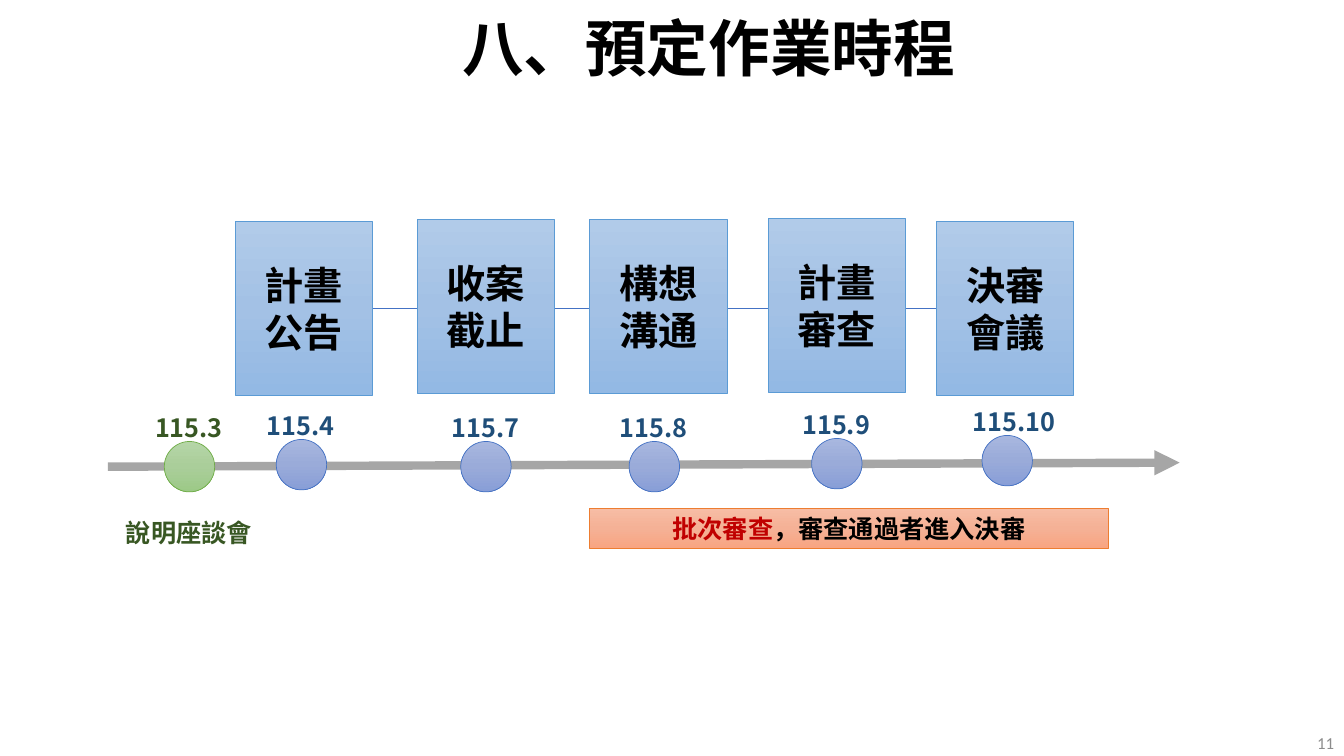
import copy
from dataclasses import dataclass

import pptx
import pptx.dml.color
import pptx.enum.dml
import pptx.enum.shapes
import pptx.enum.text
import pptx.oxml.ns
import pptx.util
from lxml import etree

Inches = pptx.util.Inches
qn = pptx.oxml.ns.qn
Align = pptx.enum.text.PP_ALIGN
Anchor = pptx.enum.text.MSO_ANCHOR
Preset = pptx.enum.shapes.MSO_SHAPE
Straight = pptx.enum.shapes.MSO_CONNECTOR.STRAIGHT


@dataclass(frozen=True)
class Theme:
    font: str = "Noto Sans CJK SC"
    number_font: str = "Calibri"
    title_size: int = 44
    step_size: int = 28
    label_size: int = 18
    number_size: int = 12
    black: str = "000000"
    gray: str = "8C8C8C"
    red: str = "C00000"
    green_text: str = "385723"
    blue_text: str = "1F4E79"
    link: str = "4472C4"
    axis: str = "A6A6A6"
    # Gradient from top to bottom, then outline
    step: tuple = ("B1CBE9", "A3C1E5", "93B9E4", "5B9BD5")
    blue_dot: tuple = ("A8B7DF", "9AABD9", "889ED7", "4472C4")
    green_dot: tuple = ("B5D5A7", "AACE9A", "9CC987", "70AD47")
    banner: tuple = ("F7BDA5", "F5B196", "F8A582", "ED7D31")


THEME = Theme()

# Left, top and words of each step
STEPS = [
    (2.33, 2.2, ("計畫", "公告")),
    (4.14, 2.18, ("收案", "截止")),
    (5.85, 2.18, ("構想", "溝通")),
    (7.62, 2.17, ("計畫", "審查")),
    (9.29, 2.2, ("決審", "會議")),
]
# Left and top of each dot, date, dot colours, date colour
MILESTONES = [
    (1.63, 4.38, "115.3", THEME.green_dot, THEME.green_text),
    (2.74, 4.36, "115.4", THEME.blue_dot, THEME.blue_text),
    (4.57, 4.38, "115.7", THEME.blue_dot, THEME.blue_text),
    (6.24, 4.38, "115.8", THEME.blue_dot, THEME.blue_text),
    (8.05, 4.35, "115.9", THEME.blue_dot, THEME.blue_text),
    (9.74, 4.32, "115.10", THEME.blue_dot, THEME.blue_text),
]


def rgb(color):
    return pptx.dml.color.RGBColor.from_string(color)


def style_font(font, size, color, bold=True, name=THEME.font):
    font.size = pptx.util.Pt(size)
    font.bold = bold
    font.color.rgb = rgb(color)
    font.name = name
    east_asian = etree.SubElement(font._element, qn("a:ea"))
    east_asian.set("typeface", name)


def add_gradient_shape(slide, preset, box, colors):
    shape = slide.shapes.add_shape(preset, *map(Inches, box))
    shape.shadow.inherit = False
    shape.fill.gradient()
    shape.fill.gradient_angle = 270
    stop_list = shape._element.spPr.find(".//" + qn("a:gsLst"))
    middle = copy.deepcopy(stop_list[0])
    middle.set("pos", "50000")
    stop_list.insert(1, middle)
    for stop, color in zip(shape.fill.gradient_stops, colors):
        stop.color.rgb = rgb(color)
    shape.line.color.rgb = rgb(colors[-1])
    shape.line.width = pptx.util.Pt(0.5)
    return shape


def add_line(slide, start, end, color, width):
    points = map(Inches, (*start, *end))
    connector = slide.shapes.add_connector(Straight, *points)
    connector.line.color.rgb = rgb(color)
    connector.line.width = pptx.util.Pt(width)
    etree.SubElement(connector._element.spPr, qn("a:effectLst"))
    return connector


def add_label(slide, box, text, color):
    label = slide.shapes.add_textbox(*map(Inches, box))
    label.text_frame.word_wrap = False
    paragraph = label.text_frame.paragraphs[0]
    paragraph.text = text
    style_font(paragraph.font, THEME.label_size, color)


def add_title(slide, box):
    title = slide.shapes.title
    title.left, title.top, title.width, title.height = map(Inches, box)
    title.text_frame.vertical_anchor = Anchor.MIDDLE
    paragraph = title.text_frame.paragraphs[0]
    paragraph.text = "八、預定作業時程"
    paragraph.alignment = Align.CENTER
    paragraph.line_spacing = 0.9
    style_font(paragraph.font, THEME.title_size, THEME.black)


def add_steps(slide, width, height):
    # The link comes first so that it runs behind the boxes
    link = add_line(slide, (0, 0), (1, 0), THEME.link, 0.5)
    boxes = []
    for left, top, words in STEPS:
        box = add_gradient_shape(slide, Preset.RECTANGLE, (left, top, width, height), THEME.step)
        frame = box.text_frame
        frame.vertical_anchor = Anchor.MIDDLE
        frame.text = "\n".join(words)
        for paragraph in frame.paragraphs:
            paragraph.alignment = Align.CENTER
            style_font(paragraph.font, THEME.step_size, THEME.black)
        boxes.append(box)
    link.begin_connect(boxes[-1], 1)
    link.end_connect(boxes[0], 3)


def add_timeline(slide, start, end, diameter):
    arrow = add_line(slide, start, end, THEME.axis, 6)
    tail = etree.SubElement(arrow.line._get_or_add_ln(), qn("a:tailEnd"))
    tail.set("type", "triangle")
    for left, top, date, colors, text_color in MILESTONES:
        dot_box = (left, top, diameter, diameter)
        add_gradient_shape(slide, Preset.FLOWCHART_CONNECTOR, dot_box, colors)
        label_width = 0.87 if len(date) == 5 else 1.02
        add_label(slide, (left - 0.19, top - 0.34, label_width, 0.4), date, text_color)


def add_review_banner(slide, box):
    banner = add_gradient_shape(slide, Preset.RECTANGLE, box, THEME.banner)
    banner.text_frame.vertical_anchor = Anchor.TOP
    paragraph = banner.text_frame.paragraphs[0]
    paragraph.alignment = Align.CENTER
    for text, color in (("批次審查", THEME.red), ("，審查通過者進入決審", THEME.black)):
        run = paragraph.add_run()
        run.text = text
        style_font(run.font, THEME.label_size, color)


def add_page_number(slide, box):
    number = slide.shapes.add_textbox(*map(Inches, box))
    number.text_frame.word_wrap = True
    number.text_frame.vertical_anchor = Anchor.MIDDLE
    paragraph = number.text_frame.paragraphs[0]
    paragraph.text = "11"
    paragraph.alignment = Align.RIGHT
    style_font(paragraph.font, THEME.number_size, THEME.gray, False, THEME.number_font)


def main():
    presentation = pptx.Presentation()
    presentation.slide_width = Inches(13.33)
    presentation.slide_height = Inches(7.5)
    slide = presentation.slides.add_slide(presentation.slide_layouts[5])
    add_title(slide, (0.73, 0, 12.6, 1.03))
    add_steps(slide, 1.36, 1.72)
    add_timeline(slide, (1.07, 4.63), (11.7, 4.59), 0.5)
    add_label(slide, (1.15, 5.08, 1.46, 0.4), "說明座談會", THEME.green_text)
    add_review_banner(slide, (5.85, 5.04, 5.14, 0.4))
    add_page_number(slide, (12.5, 7.24, 0.83, 0.26))
    presentation.save("out.pptx")


if __name__ == "__main__":
    main()
